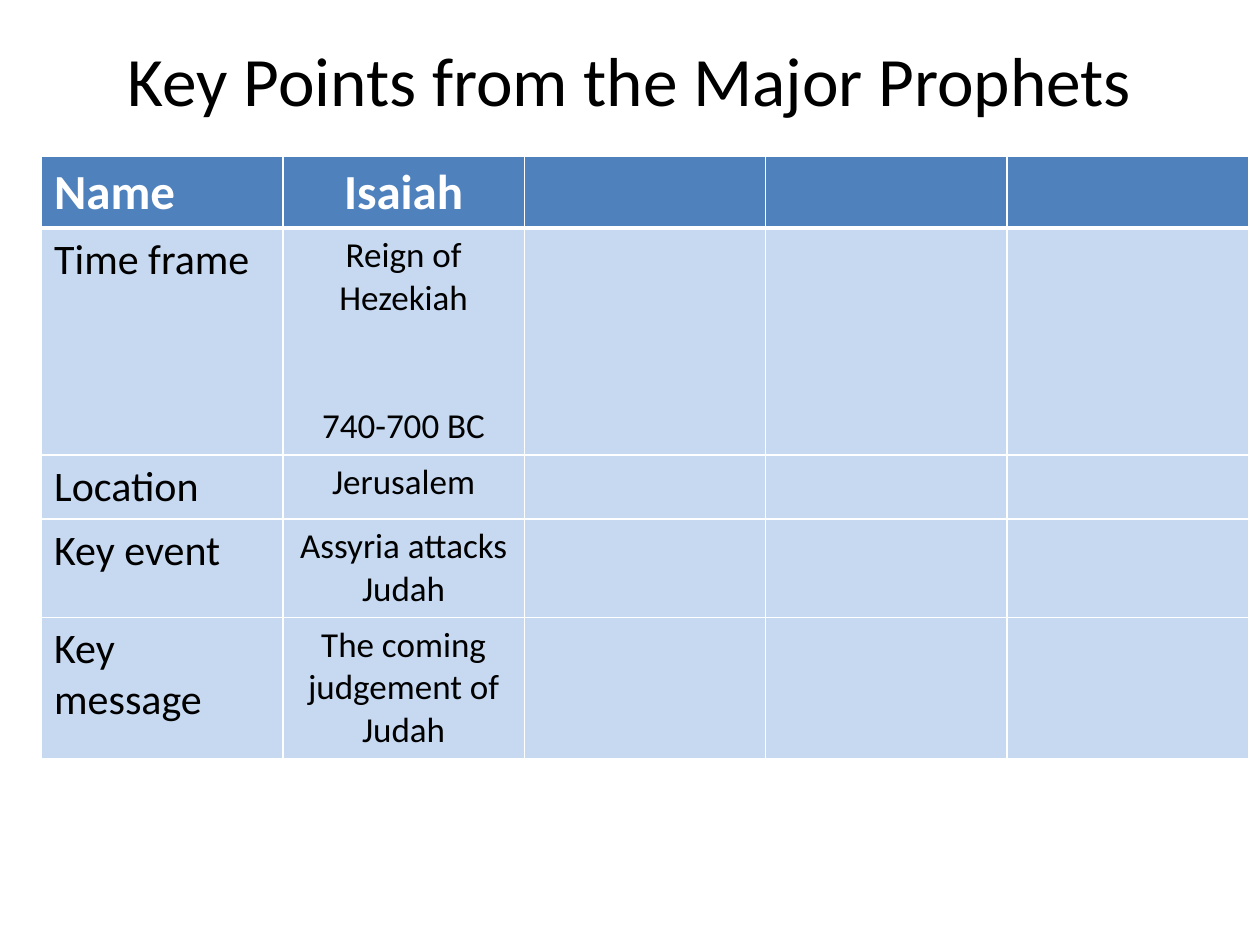
from lxml.etree import SubElement
from pptx import Presentation
from pptx.dml.color import RGBColor
from pptx.enum.text import MSO_ANCHOR, PP_ALIGN
from pptx.oxml.ns import qn
from pptx.util import Inches, Pt

BLACK = RGBColor(0, 0, 0)
WHITE = RGBColor(255, 255, 255)
BLUE = RGBColor(0x4F, 0x81, 0xBD)
PALE = RGBColor(0xC6, 0xD9, 0xF1)
FONT = "Calibri"

ROWS = [
    (0.57, "Name", "Isaiah"),
    (1.8, "Time frame", "Reign of Hezekiah\n740-700 BC"),
    (0.51, "Location", "Jerusalem"),
    (0.78, "Key event", "Assyria attacks Judah"),
    (1.12, "Key message", "The coming judgement of Judah"),
]
COLS = 5


def style(para, size, color, align, bold=False):
    para.alignment = align
    for run in para.runs:
        font = run.font
        font.name, font.size, font.bold = FONT, Pt(size), bold
        font.color.rgb = color


def add_title(slide, left, top, width, height):
    box = slide.shapes.add_textbox(left, top, width, height)
    frame = box.text_frame
    frame.word_wrap = True
    frame.vertical_anchor = MSO_ANCHOR.MIDDLE
    frame.text = "Key Points from the Major Prophets"
    style(frame.paragraphs[0], 39.6, BLACK, PP_ALIGN.CENTER)


def add_edge(cell, side, points):
    props = cell._tc.get_or_add_tcPr()
    line = SubElement(props, qn(f"a:ln{side}"), w=str(Pt(points)))
    fill = SubElement(line, qn("a:solidFill"))
    SubElement(fill, qn("a:srgbClr"), val=str(WHITE))


def paint_cell(cell, row, col):
    head = row == 0
    for side in "LRTB":
        thick = (head and side == "B") or (row == 1 and side == "T")
        add_edge(cell, side, 3 if thick else 1)
    cell.fill.solid()
    cell.fill.fore_color.rgb = BLUE if head else PALE
    size = 28 if head else 24 if col == 0 else 20
    color = WHITE if head else BLACK
    align = PP_ALIGN.LEFT if col == 0 else PP_ALIGN.CENTER
    for para in cell.text_frame.paragraphs:
        style(para, size, color, align, head)


def add_grid(slide, left, top, width):
    height = Inches(sum(row[0] for row in ROWS))
    table = slide.shapes.add_table(
        len(ROWS), COLS, left, top, width, height).table
    for col in table.columns:
        col.width = width // COLS
    for r, (tall, *texts) in enumerate(ROWS):
        table.rows[r].height = Inches(tall)
        for c, text in enumerate(texts):
            table.cell(r, c).text_frame.text = text
        for c in range(COLS):
            paint_cell(table.cell(r, c), r, c)
    dates = table.cell(1, 1).text_frame.paragraphs[1]
    dates.space_before = Pt(48.8)


def main():
    deck = Presentation()
    deck.slide_width, deck.slide_height = Inches(10), Inches(7.5)
    slide = deck.slides.add_slide(deck.slide_layouts[6])
    add_title(slide, Inches(0.5), Inches(0), Inches(9), Inches(1.25))
    add_grid(slide, Inches(0.33), Inches(1.24), Inches(9.58))
    deck.save("out.pptx")


if __name__ == "__main__":
    main()
